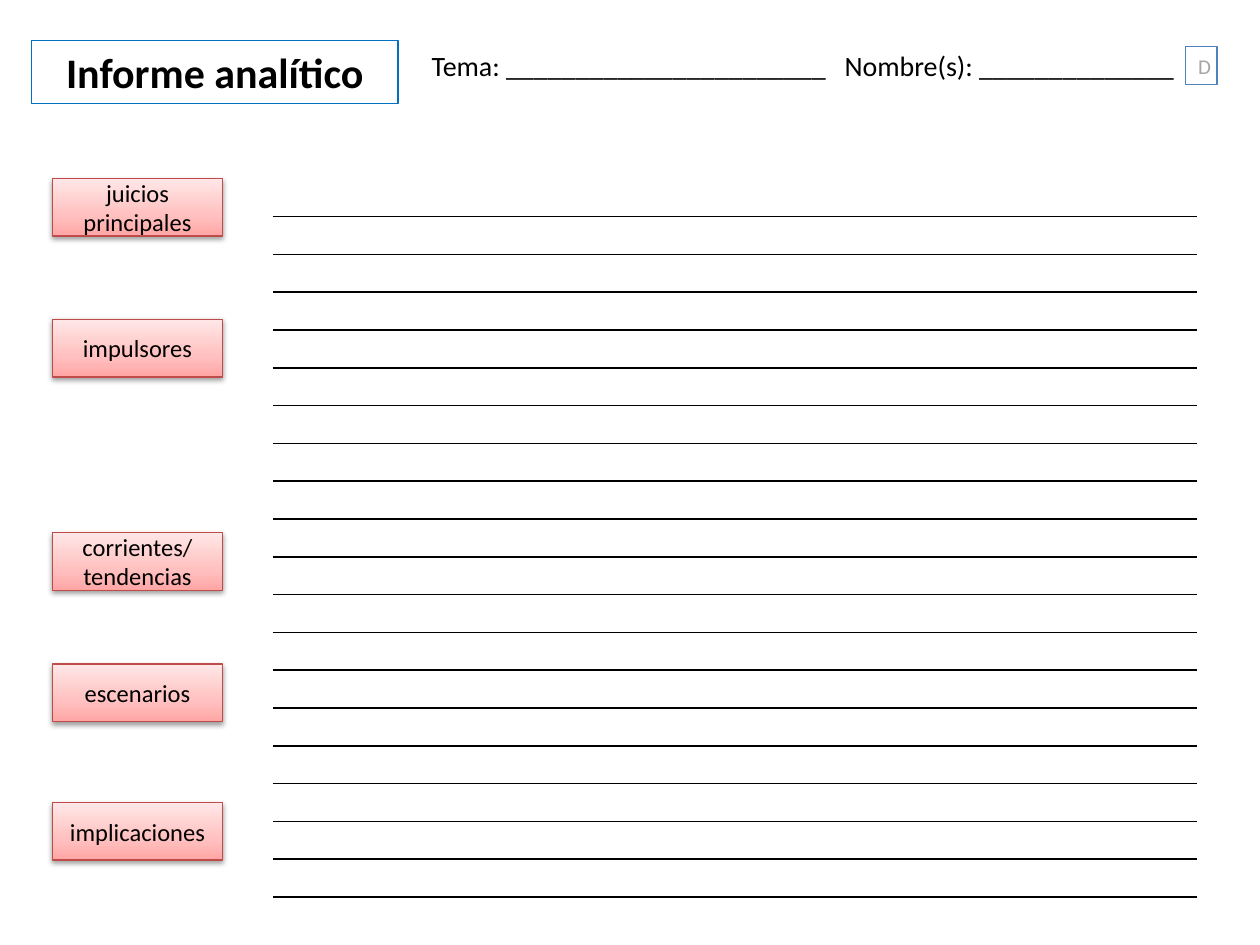
import dataclasses

import lxml.etree
import pptx
import pptx.dml.color
import pptx.enum.shapes
import pptx.enum.text
import pptx.oxml
import pptx.oxml.ns
import pptx.util

Pt = pptx.util.Pt
ALIGN = pptx.enum.text.PP_ALIGN
FIT = pptx.enum.text.MSO_AUTO_SIZE
NAMESPACE = pptx.oxml.ns.nsdecls("a")


@dataclasses.dataclass(frozen=True)
class Theme:
    """Colours, font and type sizes of the worksheet."""

    font: str = "Calibri"
    ink: str = "000000"
    paper: str = "FFFFFF"
    title_line: str = "0070C0"
    mark_line: str = "4F81BD"
    mark_text: str = "A6A6A6"
    label_line: str = "BF4C48"
    label_stops: tuple = ((0, "FFA6A5"), (35, "FFC0BF"), (100, "FFE7E7"))
    title_size: int = 24
    field_size: int = 16
    label_size: int = 14
    mark_size: int = 12
    rule_size: int = 10


THEME = Theme()


def rgb(colour):
    """Turn a hex string into a colour."""
    return pptx.dml.color.RGBColor.from_string(colour)


def write(shape, text, size, colour=THEME.ink, bold=False, align=ALIGN.CENTER):
    """Put one styled paragraph in a shape and return it."""
    shape.text_frame.word_wrap = True
    paragraph = shape.text_frame.paragraphs[0]
    paragraph.text = text
    paragraph.alignment = align
    paragraph.font.name = THEME.font
    paragraph.font.size = Pt(size)
    paragraph.font.bold = bold
    paragraph.font.color.rgb = rgb(colour)
    return paragraph


def add_box(slide, box, line):
    """Add an unfilled, outlined rectangle."""
    shape = slide.shapes.add_shape(
        pptx.enum.shapes.MSO_SHAPE.RECTANGLE, *map(Pt, box))
    shape.shadow.inherit = False
    shape.fill.background()
    shape.line.color.rgb = rgb(line)
    shape.line.width = Pt(0.75)
    return shape


def add_frame(slide, box, text, size, line, colour=THEME.ink, bold=False):
    """Add an outlined box that grows with its text."""
    shape = add_box(slide, box, line)
    write(shape, text, size, colour, bold)
    shape.text_frame.auto_size = FIT.SHAPE_TO_FIT_TEXT


def add_fields(slide, box, fields, tab):
    """Add the fill-in fields on one line, parted by a tab stop."""
    shape = slide.shapes.add_textbox(*map(Pt, box))
    paragraph = write(shape, "\t".join(fields), THEME.field_size, align=ALIGN.LEFT)
    shape.text_frame.auto_size = FIT.SHAPE_TO_FIT_TEXT
    tabs = pptx.oxml.parse_xml(
        f'<a:tabLst {NAMESPACE}><a:tab pos="{Pt(tab)}" algn="l"/></a:tabLst>')
    paragraph.font._element.getparent().insert(0, tabs)


def add_label(slide, box, text):
    """Add a shaded section label with a soft shadow."""
    shape = add_box(slide, box, THEME.label_line)
    write(shape, text, THEME.label_size)
    properties = shape._element.spPr
    stops = "".join(
        f'<a:gs pos="{position * 1000}"><a:srgbClr val="{colour}"/></a:gs>'
        for position, colour in THEME.label_stops)
    gradient = pptx.oxml.parse_xml(
        f'<a:gradFill {NAMESPACE} rotWithShape="1"><a:gsLst>{stops}</a:gsLst>'
        '<a:lin ang="16200000" scaled="1"/></a:gradFill>')
    properties.replace(properties.find(pptx.oxml.ns.qn("a:noFill")), gradient)
    shadow = lxml.etree.SubElement(
        properties.find(pptx.oxml.ns.qn("a:effectLst")),
        pptx.oxml.ns.qn("a:outerShdw"),
        blurRad=str(Pt(3.1)), dist=str(Pt(1.6)), dir="5400000", rotWithShape="0")
    shadow.append(pptx.oxml.parse_xml(
        f'<a:srgbClr {NAMESPACE} val="{THEME.ink}"><a:alpha val="38000"/></a:srgbClr>'))


def add_labels(slide, box, labels):
    """Place the section labels at their offsets down a column."""
    left, top, width, height = box
    for offset, text in labels:
        add_label(slide, (left, top + offset, width, height), text)


def rule_cell(cell, top_colour):
    """Clear a cell and draw its top and bottom rules."""
    cell.fill.background()
    cell.margin_top = cell.margin_bottom = 0
    properties = cell._tc.get_or_add_tcPr()
    for index, (side, colour) in enumerate((("T", top_colour), ("B", THEME.ink))):
        properties.insert(index, pptx.oxml.parse_xml(
            f'<a:ln{side} {NAMESPACE} w="{Pt(1)}"><a:solidFill>'
            f'<a:srgbClr val="{colour}"/></a:solidFill></a:ln{side}>'))
    lxml.etree.SubElement(
        cell.text_frame.paragraphs[0]._p, pptx.oxml.ns.qn("a:endParaRPr"),
        sz=str(THEME.rule_size * 100))


def add_writing_lines(slide, box, count):
    """Add a one-column table ruled for handwriting."""
    table = slide.shapes.add_table(count, 1, *map(Pt, box)).table
    table.first_row = table.horz_banding = False
    for index, row in enumerate(table.rows):
        row.height = Pt(box[3] / count)
        rule_cell(row.cells[0], THEME.ink if index else THEME.paper)


def add_report(slide, box):
    """Lay out the analytical report worksheet."""
    left, top, width, height = box
    add_writing_lines(slide, (left + 156.3, top + 102.2, 527, 410.4), 19)
    add_frame(slide, (left + 18, top + 23, 209.5, 36.3), "Informe analítico",
              THEME.title_size, THEME.title_line, bold=True)
    add_fields(slide, (left + 239.6, top + 24.5, 448.6, 26.6),
               ("Tema: " + "_" * 23, "Nombre(s): " + "_" * 14), 236)
    add_labels(slide, (left + 30, top + 102, 97.2, 33), (
        (0, "juicios principales"),
        (80.4, "impulsores"),
        (202.3, "corrientes/ tendencias"),
        (277.5, "escenarios"),
        (356.5, "implicaciones")))
    add_frame(slide, (left + width - 42.5, top + 26.6, 18, 21.8), "D",
              THEME.mark_size, THEME.mark_line, THEME.mark_text)


def main():
    """Build and save the presentation."""
    presentation = pptx.Presentation()
    presentation.slide_width, presentation.slide_height = Pt(720), Pt(540)
    slide = presentation.slides.add_slide(presentation.slide_layouts[6])
    add_report(slide, (0, 0, 720, 540))
    presentation.save("out.pptx")


if __name__ == "__main__":
    main()
